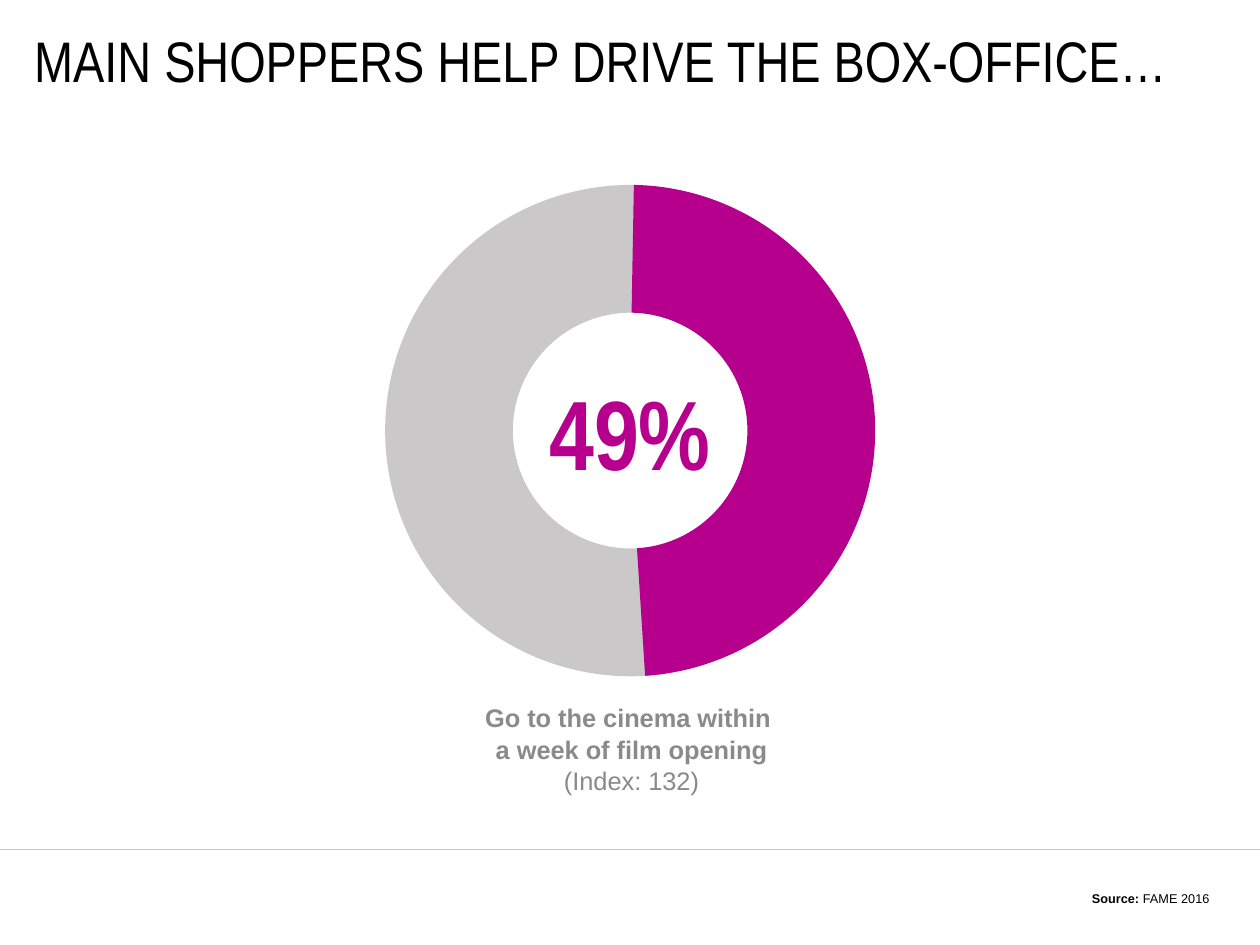
from pptx import Presentation
from pptx.dml.color import RGBColor
from pptx.enum.shapes import MSO_CONNECTOR as Link, MSO_SHAPE as Shape
from pptx.enum.text import MSO_ANCHOR as Anchor, MSO_AUTO_SIZE as Fit, PP_ALIGN as Align
from pptx.oxml.ns import qn
from pptx.util import Cm, Pt

GREY, PINK, SLATE, BLACK = "CAC8C8", "B6008D", "8A8A8D", "000000"


def paint(target, shade):
    """Set the colour of a font, or of a fill or line already made solid."""
    target.color.rgb = RGBColor.from_string(shade)


def style(para, face, size, shade, align, bold=None):
    para.alignment = align
    para.space_before = Pt(0)
    para.font.name, para.font.size, para.font.bold = face, Pt(size), bold
    paint(para.font, shade)


deck = Presentation()
deck.slide_width, deck.slide_height = Cm(28), Cm(21)
slide = deck.slides.add_slide(deck.slide_layouts[1])
shapes = slide.shapes

# Footer rule
rule = shapes.add_connector(Link.STRAIGHT, 0, Cm(18.87), Cm(28), Cm(18.87))
rule.line.width = Pt(0.5)
paint(rule.line, GREY)
props = rule._element.spPr
props.append(props.makeelement(qn("a:effectLst"), {}))

# Title
title = shapes.title
title.left, title.top, title.width, title.height = Cm(0.76), Cm(0.76), Cm(25.86), Cm(1.14)
frame = title.text_frame
frame.text = "MAIN SHOPPERS HELP DRIVE THE BOX-OFFICE…"
frame.margin_left = frame.margin_right = frame.margin_top = frame.margin_bottom = 0
frame.word_wrap, frame.auto_size = False, Fit.NONE
frame.vertical_anchor = Anchor.MIDDLE
style(frame.paragraphs[0], "Arial Narrow", 36, BLACK, Align.LEFT)

# Ring: start and end angles in degrees, clockwise from the right
for left, start, end, shade in [(8.56, 81.89, 270.87, GREY), (8.53, 271.02, 86.35, PINK)]:
    arc = shapes.add_shape(Shape.BLOCK_ARC, Cm(left), Cm(4.11), Cm(10.92), Cm(10.92))
    arc.adjustments[0] = start * 0.6
    arc.adjustments[1] = end * 0.6
    arc.adjustments[2] = 0.26
    arc.shadow.inherit = False
    arc.fill.solid()
    arc.fill.fore_color.rgb = RGBColor.from_string(shade)
    arc.line.fill.background()

# Share in the middle of the ring
share = shapes.add_textbox(Cm(11.18), Cm(8.13), Cm(5.64), Cm(2.9)).text_frame
share.word_wrap, share.vertical_anchor = True, Anchor.MIDDLE
share.text = "49%"
style(share.paragraphs[0], "Arial Narrow", 62, PINK, Align.CENTER, True)

# Caption
body = slide.placeholders[1]
body.left, body.top, body.width, body.height = Cm(5.87), Cm(15.47), Cm(16.33), Cm(2.31)
frame = body.text_frame
frame.auto_size, frame.vertical_anchor = Fit.NONE, Anchor.MIDDLE
frame.text = "Go to the cinema within \va week of film opening\n(Index: 132)"
for para, bold in zip(frame.paragraphs, (True, False)):
    fmt = para._p.get_or_add_pPr()
    fmt.set("marL", "0")
    fmt.set("indent", "0")
    fmt.append(fmt.makeelement(qn("a:buNone"), {}))
    style(para, "Arial", 16, SLATE, Align.CENTER, bold)
    para.line_spacing = 1.05

# Source
source = shapes.add_textbox(Cm(12.22), Cm(19.66), Cm(14.91), Cm(0.61)).text_frame
source.word_wrap, source.vertical_anchor = True, Anchor.BOTTOM
para = source.paragraphs[0]
for text, bold in [("Source: ", True), ("FAME 2016", False)]:
    run = para.add_run()
    run.text, run.font.bold = text, bold
style(para, "Arial", 8, BLACK, Align.RIGHT)

deck.save("out.pptx")
